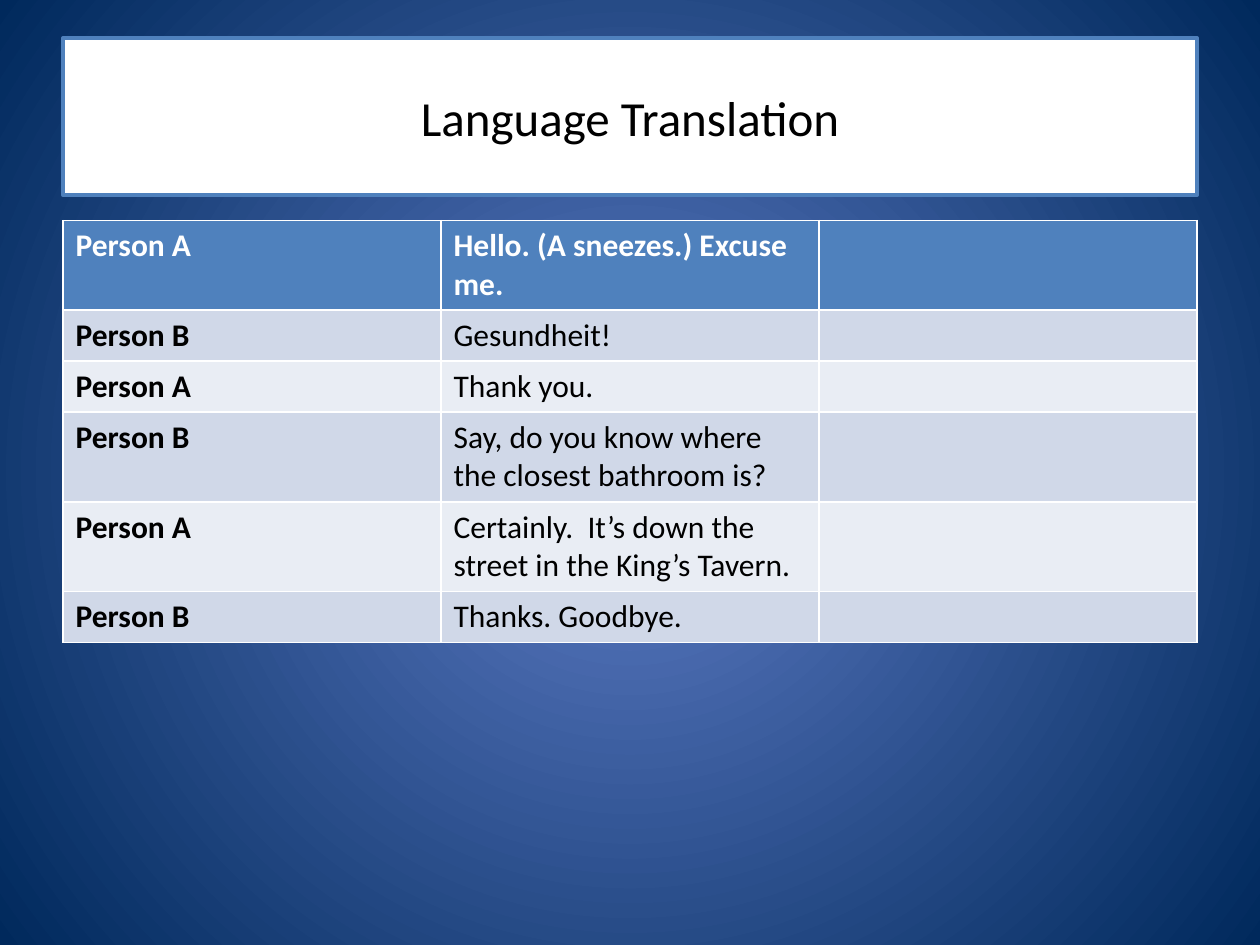
from dataclasses import dataclass
from typing import Any

from lxml.etree import SubElement
from pptx import Presentation
from pptx.dml.color import RGBColor
from pptx.enum.shapes import MSO_SHAPE
from pptx.enum.text import MSO_ANCHOR, PP_ALIGN
from pptx.oxml.ns import qn
from pptx.util import Pt


@dataclass(frozen=True)
class Theme:
    face: str = "Calibri"
    head: int = 28
    body: int = 18
    white: str = "FFFFFF"
    black: str = "000000"
    blue: str = "4F81BD"
    bands: tuple[str, str] = ("D0D8E8", "E9EDF4")
    glow: tuple[str, str] = ("5E7CC5", "00295C")


@dataclass(frozen=True)
class Line:
    who: str
    words: str


THEME = Theme()
LEFT, WIDE = 36, 648
ROW = 29.2
TALK = [
    Line("Person A", "Hello. (A sneezes.) Excuse me."),
    Line("Person B", "Gesundheit!"),
    Line("Person A", "Thank you."),
    Line("Person B", "Say, do you know where the closest bathroom is?"),
    Line("Person A", "Certainly.  It’s down the street in the King’s Tavern."),
    Line("Person B", "Thanks. Goodbye."),
]


def paint(fill: Any, tint: str) -> None:
    fill.solid()
    fill.fore_color.rgb = RGBColor.from_string(tint)


def write(frame: Any, text: str, size: int, tint: str, bold: bool = False) -> None:
    run = frame.paragraphs[0].add_run()
    run.text = text
    form = {"name": THEME.face, "size": Pt(size), "bold": bold}
    for key, value in form.items():
        setattr(run.font, key, value)
    run.font.color.rgb = RGBColor.from_string(tint)


def add_glow(slide: Any) -> None:
    fill = slide.background.fill
    fill.gradient()
    for stop, tint, spot in zip(fill.gradient_stops, THEME.glow, (0, 1)):
        stop.color.rgb = RGBColor.from_string(tint)
        stop.position = spot
    # Swap the linear sweep for a circle from the centre
    grad = slide.element.find(".//" + qn("a:gradFill"))
    grad.remove(grad.find(qn("a:lin")))
    ring = SubElement(grad, qn("a:path"), {"path": "circle"})
    SubElement(ring, qn("a:fillToRect"), dict.fromkeys("ltrb", "50000"))


def add_title(slide: Any, text: str) -> None:
    box = slide.shapes.add_shape(
        MSO_SHAPE.RECTANGLE, Pt(LEFT), Pt(21.6), Pt(WIDE), Pt(90))
    box.shadow.inherit = False
    paint(box.fill, THEME.white)
    paint(box.line.fill, THEME.blue)
    box.line.width = Pt(2)
    frame = box.text_frame
    form = {"word_wrap": True, "vertical_anchor": MSO_ANCHOR.MIDDLE}
    for key, value in form.items():
        setattr(frame, key, value)
    frame.paragraphs[0].alignment = PP_ALIGN.CENTER
    write(frame, text, THEME.head, THEME.black)


def add_talk(slide: Any, talk: list[Line]) -> None:
    # The default table style supplies the white rules
    table = slide.shapes.add_table(
        len(talk), 3, Pt(LEFT), Pt(126), Pt(WIDE), Pt(ROW * len(talk))).table
    for i, (row, line) in enumerate(zip(table.rows, talk)):
        row.height = Pt(ROW)
        top = i == 0
        tint = THEME.blue if top else THEME.bands[(i - 1) % 2]
        ink = THEME.white if top else THEME.black
        for cell in row.cells:
            paint(cell.fill, tint)
        write(row.cells[0].text_frame, line.who, THEME.body, ink, True)
        write(row.cells[1].text_frame, line.words, THEME.body, ink, top)


def main() -> None:
    deck = Presentation()
    deck.slide_width, deck.slide_height = Pt(720), Pt(540)
    slide = deck.slides.add_slide(deck.slide_layouts[6])
    add_glow(slide)
    add_title(slide, "Language Translation")
    add_talk(slide, TALK)
    deck.save("out.pptx")


if __name__ == "__main__":
    main()
